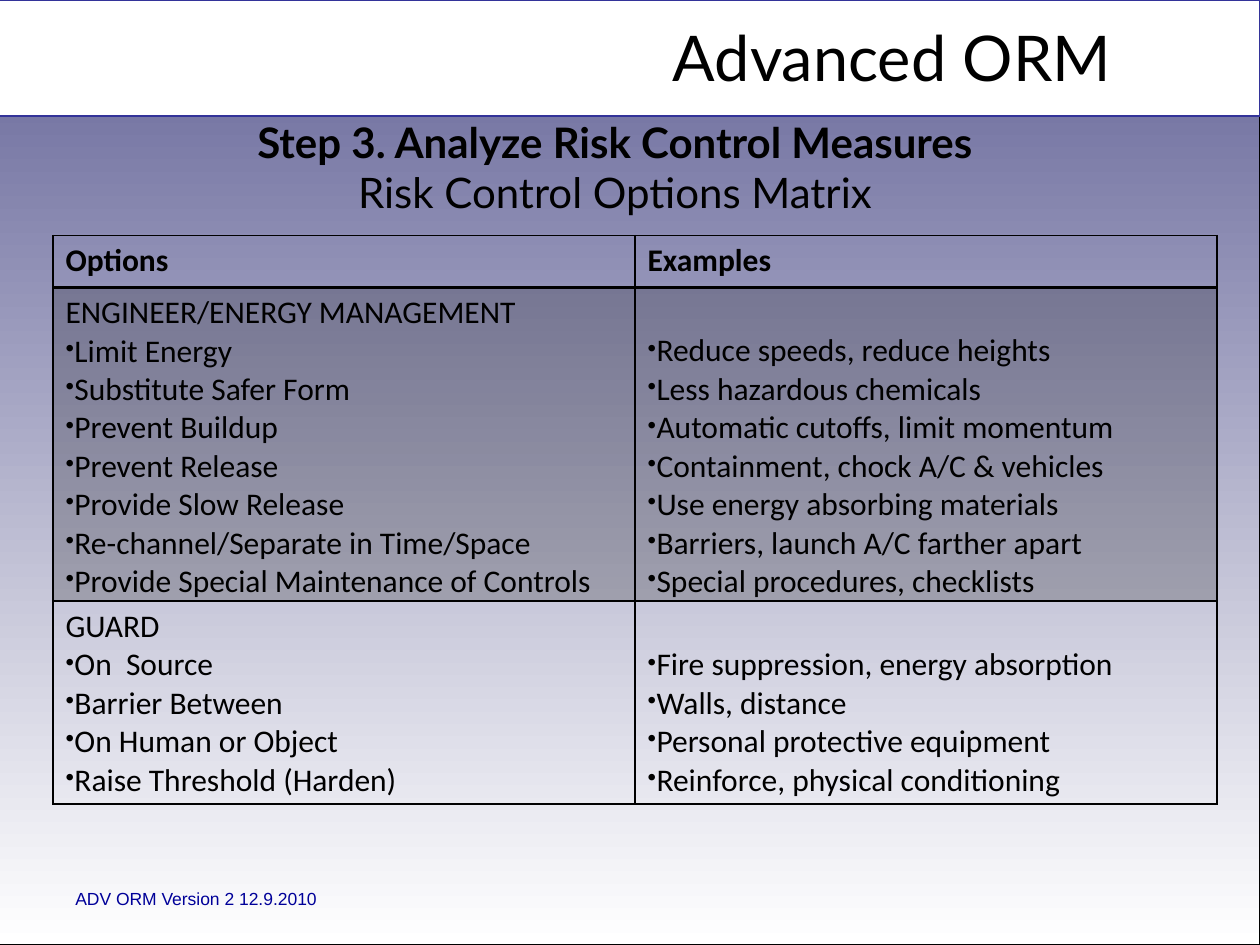
from dataclasses import dataclass

from lxml import etree
from pptx import Presentation
from pptx.dml.color import RGBColor
from pptx.enum.shapes import MSO_SHAPE
from pptx.enum.text import MSO_ANCHOR, MSO_AUTO_SIZE, PP_ALIGN
from pptx.oxml.ns import qn
from pptx.util import Inches, Pt

RECTANGLE = MSO_SHAPE.RECTANGLE
MIDDLE = MSO_ANCHOR.MIDDLE
NO_AUTOFIT = MSO_AUTO_SIZE.NONE
CENTER = PP_ALIGN.CENTER


@dataclass(frozen=True)
class Theme:
    black: str = "000000"
    white: str = "FFFFFF"
    slate: str = "666699"
    banner_line: str = "333399"
    footer_blue: str = "000099"
    heading_font: str = "Lato"
    table_font: str = "Calibri"
    footer_font: str = "Arial"
    banner_size: int = 36
    title_size: int = 24
    table_size: int = 18
    footer_size: int = 10


theme = Theme()


def add_run(paragraph, text, font, size, color, bold=False):
    run = paragraph.add_run()
    run.text = text
    run.font.name = font
    run.font.size = Pt(size)
    run.font.bold = bold
    run.font.color.rgb = RGBColor.from_string(color)


def add_child(parent, tag, **attributes):
    child = etree.SubElement(parent, qn(tag))
    for name, value in attributes.items():
        child.set(name, str(value))
    return child


presentation = Presentation()
presentation.slide_width = Inches(10)
presentation.slide_height = Inches(7.5)
slide = presentation.slides.add_slide(presentation.slide_layouts[5])

# Gradient background and white banner
background = slide.shapes.add_shape(
    RECTANGLE, Inches(-0.12), 0, Inches(10.12), Inches(7.5))
background.fill.gradient()
background.fill.gradient_angle = 270
for stop, color in zip(background.fill.gradient_stops, (theme.slate, theme.white)):
    stop.color.rgb = RGBColor.from_string(color)

banner = slide.shapes.add_shape(
    RECTANGLE, Inches(-0.12), 0, Inches(10.12), Inches(0.92))
banner.fill.solid()
banner.fill.fore_color.rgb = RGBColor.from_string(theme.white)

for panel, color in ((background, theme.black), (banner, theme.banner_line)):
    panel.shadow.inherit = False
    panel.line.color.rgb = RGBColor.from_string(color)
    panel.line.width = Pt(0.75)

# Course name and version line
course = slide.shapes.add_textbox(
    Inches(4.16), Inches(0.16), Inches(5.84), Inches(0.57))
course.text_frame.word_wrap = True
course.text_frame.vertical_anchor = MIDDLE
paragraph = course.text_frame.paragraphs[0]
paragraph.alignment = CENTER
add_run(paragraph, "Advanced ORM", theme.heading_font, theme.banner_size, theme.black)

version = slide.shapes.add_textbox(Inches(0.5), Inches(7), Inches(8), Inches(0.27))
version.text_frame.word_wrap = True
add_run(version.text_frame.paragraphs[0], "ADV ORM Version 2 12.9.2010",
        theme.footer_font, theme.footer_size, theme.footer_blue)

# Title, brought in front of the background
title = slide.shapes.title
slide.shapes._spTree.append(title._element)
title.left, title.top = Inches(0.44), Inches(1.03)
title.width, title.height = Inches(8.88), Inches(0.59)
title.text_frame.word_wrap = True
title.text_frame.auto_size = NO_AUTOFIT
title.text_frame.vertical_anchor = MIDDLE
paragraph = title.text_frame.paragraphs[0]
paragraph.alignment = CENTER
add_run(paragraph, "Step 3. Analyze Risk Control Measures",
        theme.heading_font, theme.title_size, theme.black, bold=True)
paragraph.add_line_break()
add_run(paragraph, "Risk Control Options Matrix",
        theme.heading_font, theme.title_size, theme.black)

# Options matrix: each cell is a heading and its bullets
matrix = [
    [("Options", []), ("Examples", [])],
    [("ENGINEER/ENERGY MANAGEMENT",
      ["Limit Energy", "Substitute Safer Form", "Prevent Buildup",
       "Prevent Release", "Provide Slow Release",
       "Re-channel/Separate in Time/Space",
       "Provide Special Maintenance of Controls"]),
     (None,
      ["Reduce speeds, reduce heights", "Less hazardous chemicals",
       "Automatic cutoffs, limit momentum",
       "Containment, chock A/C & vehicles", "Use energy absorbing materials",
       "Barriers, launch A/C farther apart",
       "Special procedures, checklists"])],
    [("GUARD",
      ["On  Source", "Barrier Between", "On Human or Object",
       "Raise Threshold (Harden)"]),
     (None,
      ["Fire suppression, energy absorption", "Walls, distance",
       "Personal protective equipment", "Reinforce, physical conditioning"])],
]
row_heights = (0.41, 2.49, 1.61)
cell_margin = 0.05
line_height = 0.305

table = slide.shapes.add_table(
    3, 2, Inches(0.42), Inches(1.87), Inches(9.24), Inches(sum(row_heights))).table
table.horz_banding = False
for column in table.columns:
    column.width = Inches(4.62)

for row_index, (row, height) in enumerate(zip(matrix, row_heights)):
    table.rows[row_index].height = Inches(height)
    for column_index, (heading, bullets) in enumerate(row):
        cell = table.cell(row_index, column_index)
        # Without a heading, the bullets start level with the first column's
        cell.margin_top = Inches(cell_margin if heading else cell_margin + line_height)
        cell.margin_bottom = Inches(0 if bullets else cell_margin)

        lines = ([heading] if heading else []) + bullets
        for line_index, text in enumerate(lines):
            frame = cell.text_frame
            paragraph = frame.add_paragraph() if line_index else frame.paragraphs[0]
            if text in bullets:
                properties = paragraph._p.get_or_add_pPr()
                bullet_color = add_child(properties, "a:buClr")
                add_child(bullet_color, "a:srgbClr", val=theme.black)
                add_child(properties, "a:buSzPct", val=80000)
                add_child(properties, "a:buChar", char="•")
            add_run(paragraph, text, theme.table_font, theme.table_size,
                    theme.black, bold=row_index == 0)

        cell_properties = cell._tc.get_or_add_tcPr()
        widths = {"L": 1, "R": 1,
                  "T": 2 if row_index == 1 else 1,
                  "B": 2 if row_index == 0 else 1}
        for side, width in widths.items():
            border = add_child(cell_properties, f"a:ln{side}", w=Pt(width))
            border_fill = add_child(border, "a:solidFill")
            add_child(border_fill, "a:srgbClr", val=theme.black)

        if row_index == 1:
            cell.fill.solid()
            cell.fill.fore_color.rgb = RGBColor.from_string(theme.black)
            tint = cell_properties.find(qn("a:solidFill")).find(qn("a:srgbClr"))
            add_child(tint, "a:alpha", val=20000)
        else:
            cell.fill.background()

presentation.save("out.pptx")
